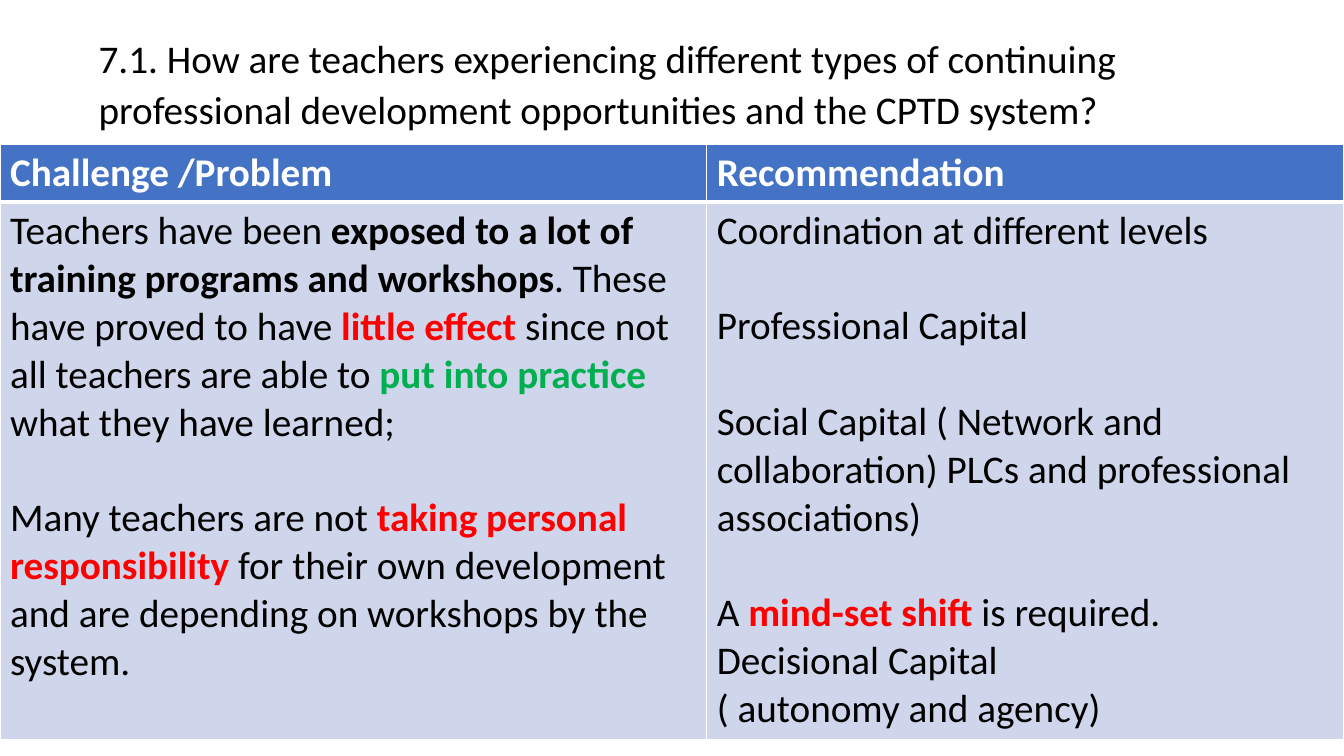
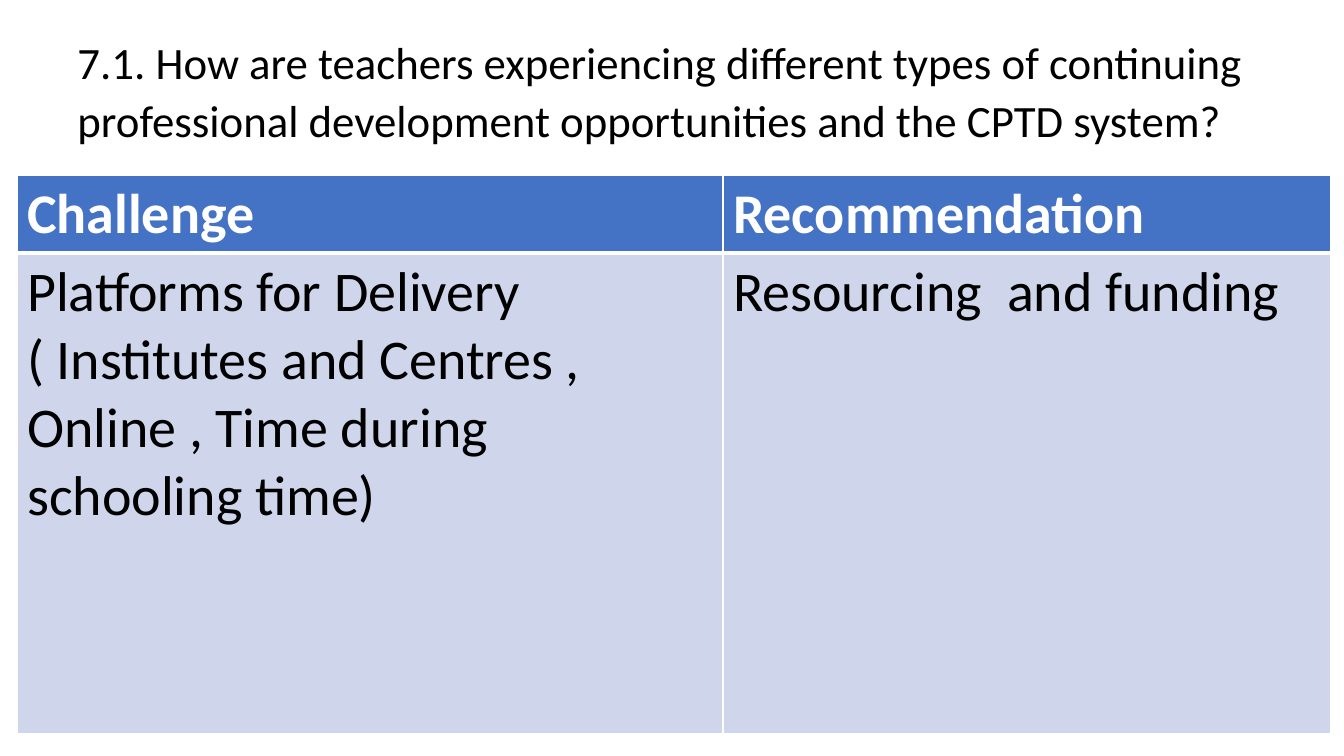
from dataclasses import dataclass, field

from lxml.etree import SubElement
from pptx import Presentation
from pptx.dml.color import RGBColor
from pptx.enum.text import MSO_AUTO_SIZE
from pptx.oxml.ns import qn
from pptx.slide import Slide
from pptx.table import _Cell
from pptx.text.text import _Paragraph
from pptx.util import Emu, Pt

PX = 9144  # EMU per px, 100 px to the inch


@dataclass(frozen=True)
class Theme:
    font: str = "Calibri"
    ink: str = "000000"
    white: str = "FFFFFF"
    header: str = "4472C4"
    body: str = "CFD5EA"
    warning: str = "FF0000"
    success: str = "00B050"
    thin_rule: int = 1
    thick_rule: int = 3
    small: int = 28
    medium: int = 32
    large: int = 40


THEME = Theme()


@dataclass(frozen=True)
class Span:
    text: str
    color: str = THEME.ink
    bold: bool = False


@dataclass(frozen=True)
class Para:
    spans: list[Span]
    gap: int = 0  # points before the paragraph


@dataclass(frozen=True)
class Box:
    left: int
    top: int
    width: int
    height: int

    def emu(self) -> list[Emu]:
        return [Emu(v * PX) for v in (self.left, self.top, self.width, self.height)]


@dataclass(frozen=True)
class Page:
    question_box: Box
    question_size: int
    table_box: Box
    first_column: int
    header_height: int
    text_size: int
    headings: list[str]
    answers: list[list[Para]] = field(default_factory=list)


def plain(text: str, gap: int = 0) -> Para:
    return Para([Span(text)], gap)


QUESTION = (
    "7.1. How are teachers experiencing different types of continuing "
    "professional development opportunities and the CPTD system?"
)
LINE_GAP = 34  # one line of small text

PAGES = [
    Page(
        Box(38, 26, 1157, 109), THEME.small,
        Box(0, 143, 1333, 590), 701, 57, THEME.small,
        ["Challenge /Problem", "Recommendation"],
        [
            [
                Para([
                    Span("Teachers have been "),
                    Span("exposed to a lot of training programs and workshops", bold=True),
                    Span(". These have proved to have "),
                    Span("little effect ", THEME.warning, True),
                    Span("since not all teachers are able to "),
                    Span("put into practice ", THEME.success, True),
                    Span("what they have learned;"),
                ]),
                Para([
                    Span("Many teachers are not "),
                    Span("taking personal responsibility ", THEME.warning, True),
                    Span("for their own development and are depending on workshops by the system."),
                ], LINE_GAP),
            ],
            [
                plain("Coordination at different levels"),
                plain("Professional Capital", LINE_GAP),
                plain(
                    "Social Capital ( Network and collaboration) PLCs and "
                    "professional associations)", LINE_GAP),
                Para([
                    Span("A "),
                    Span("mind-set shift ", THEME.warning, True),
                    Span("is required."),
                ], LINE_GAP),
                plain("Decisional Capital"),
                plain("( autonomy and agency)"),
            ],
        ],
    ),
    Page(
        Box(17, 26, 1293, 123), THEME.medium,
        Box(17, 174, 1303, 553), 700, 76, THEME.large,
        ["Challenge", "Recommendation"],
        [
            [plain(
                "Platforms for Delivery ( Institutes and Centres , Online , "
                "Time during schooling time)")],
            [plain("Resourcing  and funding")],
        ],
    ),
]


def add_span(paragraph: _Paragraph, span: Span, size: int) -> None:
    run = paragraph.add_run()
    run.text = span.text
    formats = {"name": THEME.font, "size": Pt(size), "bold": span.bold}
    for name, value in formats.items():
        setattr(run.font, name, value)
    run.font.color.rgb = RGBColor.from_string(span.color)


def add_border(cell: _Cell, side: str, points: int) -> None:
    line = SubElement(cell._tc.get_or_add_tcPr(), qn(f"a:ln{side}"), w=str(Pt(points)))
    SubElement(SubElement(line, qn("a:solidFill")), qn("a:srgbClr"), val=THEME.white)


def fill_cell(cell: _Cell, paras: list[Para], size: int, is_header: bool) -> None:
    # The rule between header and body is thick
    thick_side = "B" if is_header else "T"
    for side in "LRTB":
        add_border(cell, side, THEME.thick_rule if side == thick_side else THEME.thin_rule)
    cell.fill.solid()
    cell.fill.fore_color.rgb = RGBColor.from_string(THEME.header if is_header else THEME.body)
    for index, para in enumerate(paras):
        frame = cell.text_frame
        paragraph = frame.add_paragraph() if index else frame.paragraphs[0]
        if para.gap:
            paragraph.space_before = Pt(para.gap)
        for span in para.spans:
            add_span(paragraph, span, size)


def add_comparison(slide: Slide, page: Page) -> None:
    box = page.table_box
    table = slide.shapes.add_table(2, 2, *box.emu()).table
    table.horz_banding = False
    widths = [page.first_column, box.width - page.first_column]
    heights = [page.header_height, box.height - page.header_height]
    for column, width in zip(table.columns, widths):
        column.width = Emu(width * PX)
    for row, height in zip(table.rows, heights):
        row.height = Emu(height * PX)
    headings = [[Para([Span(text, THEME.white, True)])] for text in page.headings]
    for r, contents in enumerate([headings, page.answers]):
        for c, paras in enumerate(contents):
            fill_cell(table.cell(r, c), paras, page.text_size, r == 0)


def add_question(slide: Slide, page: Page) -> None:
    frame = slide.shapes.add_textbox(*page.question_box.emu()).text_frame
    for name, value in {"word_wrap": True, "auto_size": MSO_AUTO_SIZE.SHAPE_TO_FIT_TEXT}.items():
        setattr(frame, name, value)
    paragraph = frame.paragraphs[0]
    for name, value in {"level": 1, "line_spacing": 1.07, "space_after": Pt(7.5)}.items():
        setattr(paragraph, name, value)
    properties = paragraph._p.get_or_add_pPr()
    for name, value in {"marL": 50 * PX, "indent": 0}.items():
        properties.set(name, str(value))
    add_span(paragraph, Span(QUESTION), page.question_size)


def main() -> None:
    deck = Presentation()
    deck.slide_width, deck.slide_height = Emu(1333 * PX), Emu(750 * PX)
    blank = deck.slide_layouts[6]
    for page in PAGES:
        slide = deck.slides.add_slide(blank)
        add_comparison(slide, page)
        add_question(slide, page)
    deck.save("out.pptx")


if __name__ == "__main__":
    main()
